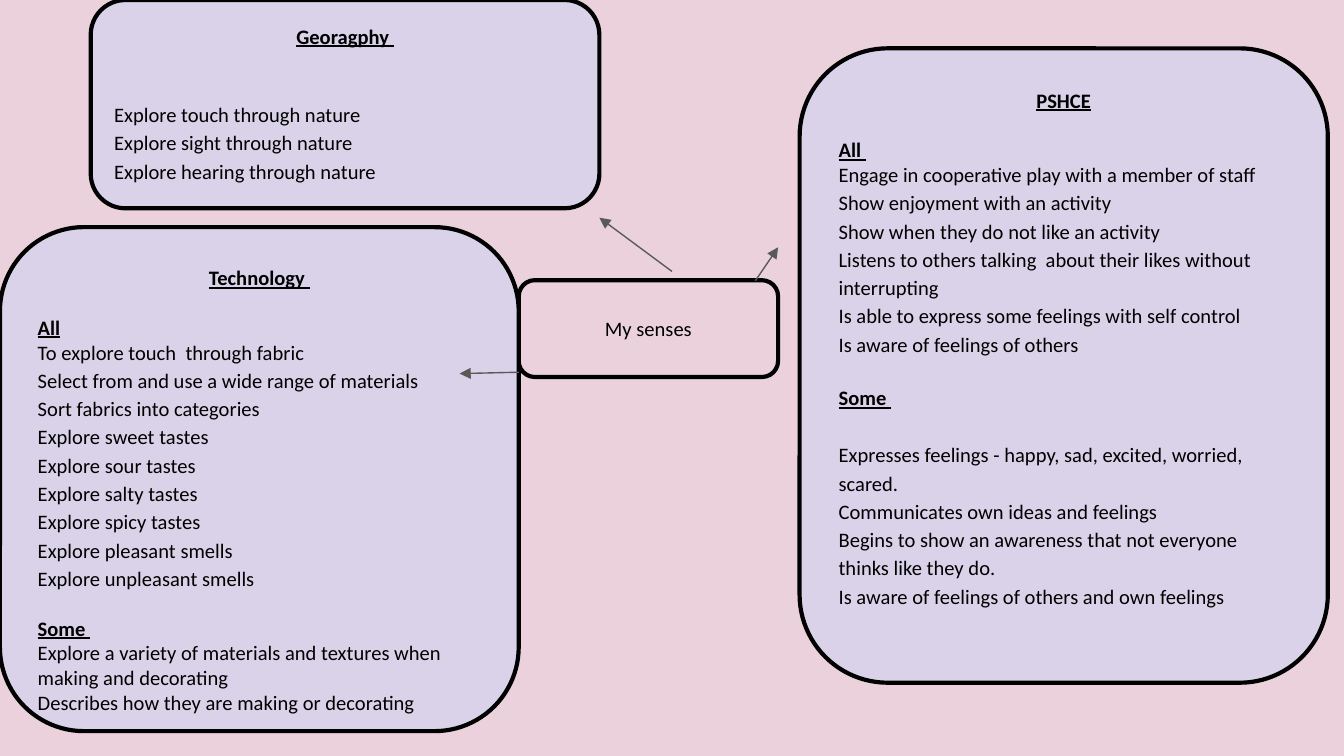
from dataclasses import dataclass

from lxml import etree
from pptx import Presentation, util as u
from pptx.dml.color import RGBColor
from pptx.enum import shapes, text
from pptx.oxml import ns

COLORS = {"pink": "EAD1DC", "lilac": "D9D2E9", "ink": "000000", "arrow": "595959"}
FONT, FONT_SIZE = "Calibri", u.Pt(11)
COLUMNS, ROWS = 100, 56.25  # a 16:9 slide in cells of a tenth of an inch
CELL = u.Inches(0.1)
LINE, WIDE_LINE = 13.4, 15.4  # points taken by a line at single and 1.15 spacing
LEFT, CENTER = text.PP_ALIGN.LEFT, text.PP_ALIGN.CENTER


@dataclass
class Entry:
    words: str
    heading: bool = False
    spacing: float = 1.15
    before: float = 0
    align: text.PP_ALIGN = LEFT


@dataclass
class Box:
    column: float
    row: float
    columns: float
    rows: float
    fill: str
    entries: list[Entry]
    anchor: text.MSO_ANCHOR = text.MSO_ANCHOR.TOP


@dataclass
class Arrow:
    start: tuple[float, float]
    end: tuple[float, float]


def title(words: str) -> Entry:
    return Entry(words, heading=True, spacing=1, align=CENTER)


def heading(words: str, before: float) -> Entry:
    return Entry(words, heading=True, spacing=1, before=before)


def cells(count: float) -> u.Emu:
    return u.Emu(round(count * CELL))


def color(name: str) -> RGBColor:
    return RGBColor.from_string(COLORS[name])


def draw_box(slide, box: Box) -> None:
    shape = slide.shapes.add_shape(
        shapes.MSO_SHAPE.ROUNDED_RECTANGLE,
        *map(cells, (box.column, box.row, box.columns, box.rows)))
    shape.shadow.inherit = False
    shape.fill.solid()
    shape.fill.fore_color.rgb = color(box.fill)
    shape.line.color.rgb = color("ink")
    shape.line.width = u.Pt(2.25)
    frame = shape.text_frame
    frame.word_wrap = True
    frame.vertical_anchor = box.anchor
    frame.margin_left = frame.margin_right = CELL
    frame.margin_top = frame.margin_bottom = CELL
    frame.text = "\n".join(entry.words for entry in box.entries)
    for paragraph, entry in zip(frame.paragraphs, box.entries):
        paragraph.alignment = entry.align
        paragraph.line_spacing = entry.spacing
        if entry.before:
            paragraph.space_before = u.Pt(entry.before)
        for run in paragraph.runs:
            run.font.name, run.font.size = FONT, FONT_SIZE
            run.font.bold = run.font.underline = entry.heading
            run.font.color.rgb = color("ink")


def draw_arrow(slide, arrow: Arrow) -> None:
    connector = slide.shapes.add_connector(
        shapes.MSO_CONNECTOR.STRAIGHT, *map(cells, arrow.start + arrow.end))
    connector.line.color.rgb = color("arrow")
    connector.line.width = u.Pt(0.75)
    etree.SubElement(connector.line._get_or_add_ln(), ns.qn("a:tailEnd"), type="triangle")
    etree.SubElement(connector._element.spPr, ns.qn("a:effectLst"))


# Theme in the middle
HUB = Box(38.6, 20.85, 19.3, 7.2, "pink",
          [Entry("My senses", spacing=1, align=CENTER)], text.MSO_ANCHOR.MIDDLE)

# Subjects around it
TECHNOLOGY = Box(0, 16.9, 38.6, 37.5, "lilac", [
    title("Technology "),
    heading("All", LINE),
    Entry("To explore touch  through fabric", spacing=1),
    Entry("Select from and use a wide range of materials"),
    Entry("Sort fabrics into categories"),
    *(Entry(f"Explore {taste} tastes") for taste in ("sweet", "sour", "salty", "spicy")),
    *(Entry(f"Explore {smell} smells") for smell in ("pleasant", "unpleasant")),
    heading("Some ", LINE),
    Entry("Explore a variety of materials and textures when making and decorating", spacing=1),
    Entry("Describes how they are making or decorating", spacing=1),
])
PSHCE = Box(59.5, 3.6, 39.3, 47.2, "lilac", [
    title("PSHCE"),
    heading("All ", LINE),
    Entry("Engage in cooperative play with a member of staff", spacing=1),
    Entry("Show enjoyment with an activity"),
    Entry("Show when they do not like an activity"),
    Entry("Listens to others talking  about their likes without interrupting"),
    Entry("Is able to express some feelings with self control"),
    Entry("Is aware of feelings of others"),
    heading("Some ", WIDE_LINE),
    Entry("Expresses feelings - happy, sad, excited, worried, scared.", before=WIDE_LINE),
    Entry("Communicates own ideas and feelings"),
    Entry("Begins to show an awareness that not everyone thinks like they do."),
    Entry("Is aware of feelings of others and own feelings"),
])
GEOGRAPHY = Box(6.75, 0, 37.85, 15.5, "lilac", [
    title("Georagphy "),
    Entry("Explore touch through nature", before=2 * LINE),
    Entry("Explore sight through nature"),
    Entry("Explore hearing through nature"),
])

ARROWS = [
    Arrow((56.2, 20.9), (57.9, 18.4)),
    Arrow((50, 20.2), (44.6, 16.2)),
    Arrow((38.6, 27.7), (34.2, 27.8)),
]


def main() -> None:
    presentation = Presentation()
    presentation.slide_width, presentation.slide_height = cells(COLUMNS), cells(ROWS)
    slide = presentation.slides.add_slide(presentation.slide_layouts[6])
    slide.background.fill.solid()
    slide.background.fill.fore_color.rgb = color("pink")
    for box in (HUB, TECHNOLOGY, PSHCE, GEOGRAPHY):
        draw_box(slide, box)
    for arrow in ARROWS:
        draw_arrow(slide, arrow)
    presentation.save("out.pptx")


if __name__ == "__main__":
    main()
